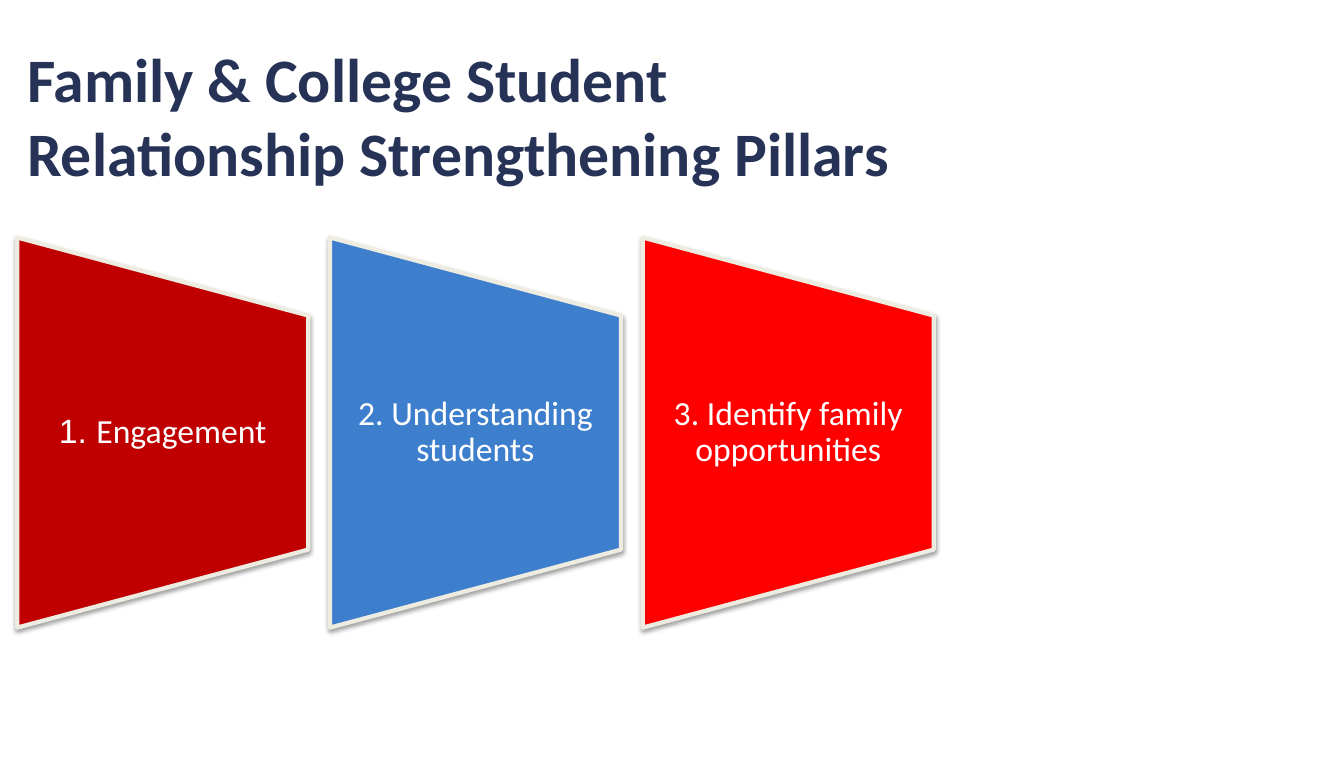
from dataclasses import dataclass

from lxml.etree import SubElement as Sub
from pptx import Presentation
from pptx.dml.color import RGBColor as Rgb
from pptx.enum.shapes import MSO_SHAPE as Kind
from pptx.enum.text import MSO_ANCHOR as Anchor, MSO_AUTO_SIZE as Auto, PP_ALIGN as Align
from pptx.oxml.ns import qn
from pptx.util import Inches, Pt

# Grid of 133 columns by 75 rows
WIDE, HIGH = Inches(13.3), Inches(7.5)
COLS, ROWS = 133, 75
LEFT, STEP = 1.7, 30.95
MID, LONG, DEEP, TALL = 42.8, 38.6, 28.8, 23.2

HUES = {"navy": "263357", "dark": "C00000", "blue": "3E7FCD", "red": "FF0000",
        "edge": "EEECE0", "white": "FFFFFF", "shade": "000000"}


@dataclass(frozen=True)
class Run:
    text: str
    font: str = "Calibri"


@dataclass(frozen=True)
class Pillar:
    hue: str
    runs: tuple[Run, ...]


TITLE = ("Family & College Student", "Relationship Strengthening Pillars")
PILLARS = (
    Pillar("dark", (Run("1. ", "Arial"), Run("Engagement"))),
    Pillar("blue", (Run("2. Understanding students"),)),
    Pillar("red", (Run("3. Identify family opportunities"),)),
)


def area(col: float, row: float, cols: float, rows: float) -> tuple[int, ...]:
    return (round(WIDE * col / COLS), round(HIGH * row / ROWS),
            round(WIDE * cols / COLS), round(HIGH * rows / ROWS))


def tint(hue: str) -> Rgb:
    return Rgb.from_string(HUES[hue])


def write(para, runs: tuple[Run, ...], size: int, hue: str, bold: bool = False) -> None:
    for item in runs:
        run = para.add_run()
        run.text = item.text
        run.font.name = item.font
        run.font.size = Pt(size)
        run.font.bold = bold
        run.font.color.rgb = tint(hue)


def shade(shape) -> None:
    shape.shadow.inherit = False
    effects = shape._element.spPr.find(qn("a:effectLst"))
    outer = Sub(effects, qn("a:outerShdw"), blurRad=str(Pt(3.1)), dist=str(Pt(1.6)),
                dir="5400000", rotWithShape="0")
    color = Sub(outer, qn("a:srgbClr"), val=HUES["shade"])
    Sub(color, qn("a:alpha"), val="37000")


def head(slide) -> None:
    frame = slide.shapes.add_textbox(*area(LEFT, 3.5, 109.9, 15.8)).text_frame
    frame.word_wrap = True
    frame.auto_size = Auto.SHAPE_TO_FIT_TEXT
    for i, line in enumerate(TITLE):
        para = frame.add_paragraph() if i else frame.paragraphs[0]
        write(para, (Run(line),), 44, "navy", True)


def draw(slide, pillar: Pillar, left: float) -> None:
    # Trapezoid, turned so that its wide side faces left
    box = area(left + (DEEP - LONG) / 2, MID - DEEP / 2, LONG, DEEP)
    shape = slide.shapes.add_shape(Kind.FLOWCHART_MANUAL_OPERATION, *box)
    shape.rotation = 270
    shape.fill.solid()
    shape.fill.fore_color.rgb = tint(pillar.hue)
    shape.line.color.rgb = tint("edge")
    shape.line.width = Pt(3)
    shade(shape)

    # Upright label
    frame = slide.shapes.add_textbox(*area(left, MID - TALL / 2, DEEP, TALL)).text_frame
    frame.word_wrap = True
    frame.vertical_anchor = Anchor.MIDDLE
    frame.margin_left = frame.margin_right = Inches(0.17)
    frame.margin_top = frame.margin_bottom = 0
    para = frame.paragraphs[0]
    para.alignment = Align.CENTER
    para.line_spacing = 0.9
    write(para, pillar.runs, 24, "white")


def main() -> None:
    deck = Presentation()
    deck.slide_width, deck.slide_height = WIDE, HIGH
    slide = deck.slides.add_slide(deck.slide_layouts[6])
    head(slide)
    for i, pillar in enumerate(PILLARS):
        draw(slide, pillar, LEFT + i * STEP)
    deck.save("out.pptx")


if __name__ == "__main__":
    main()
